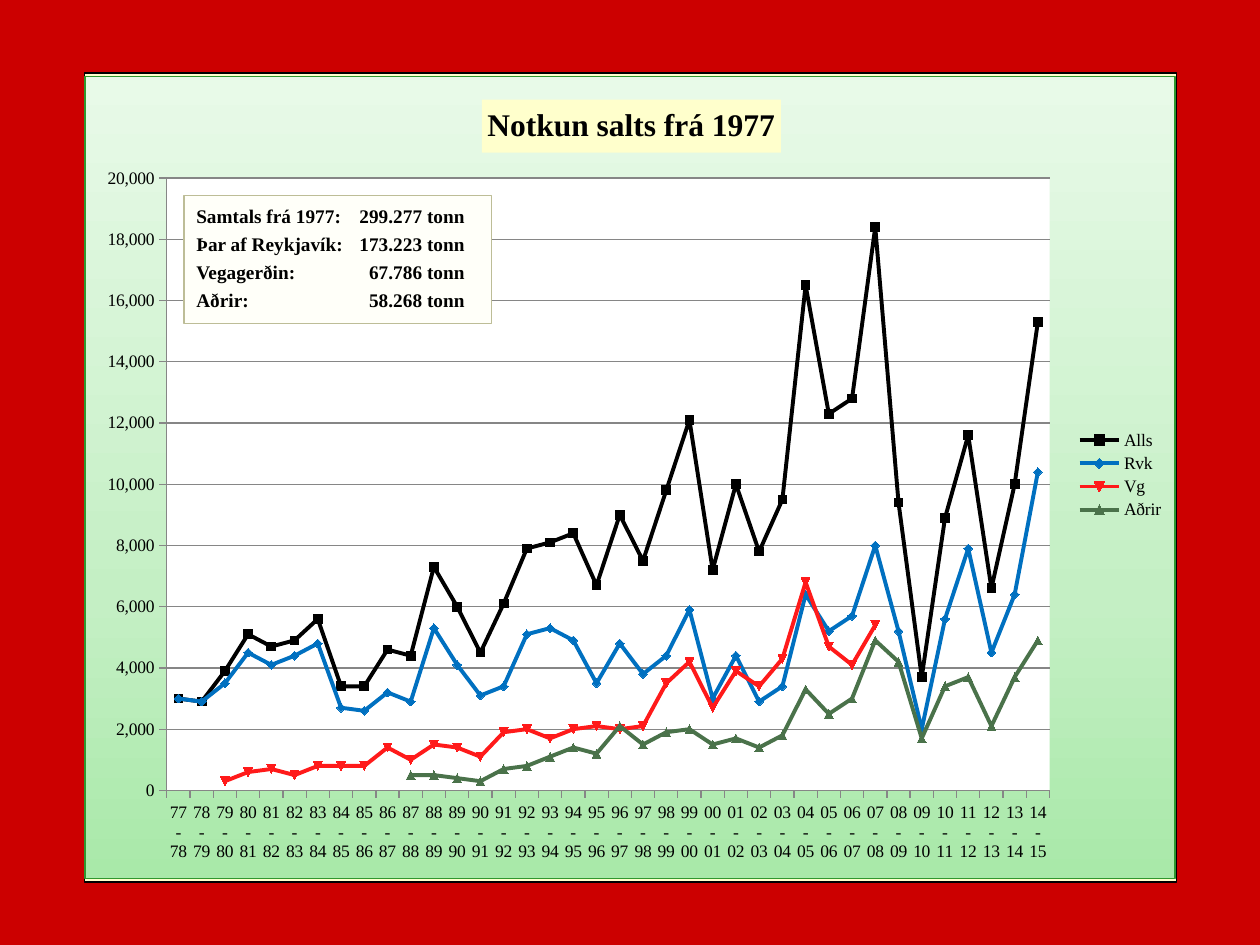
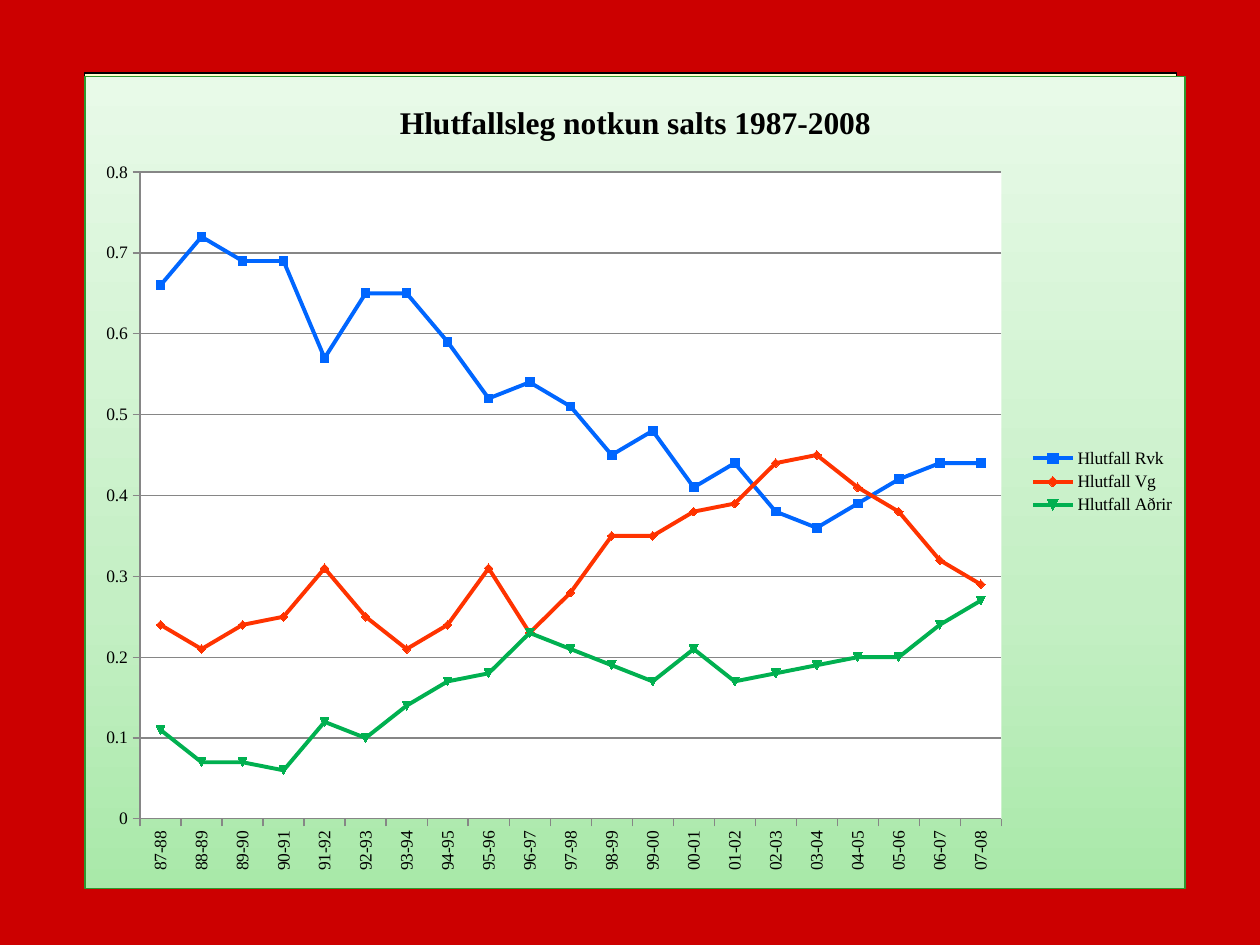
from lxml import etree
from pptx import Presentation
from pptx.chart.data import CategoryChartData
from pptx.dml.color import RGBColor
from pptx.enum.chart import XL_CHART_TYPE, XL_LEGEND_POSITION, XL_TICK_MARK
from pptx.enum.shapes import MSO_SHAPE
from pptx.enum.text import MSO_ANCHOR, PP_ALIGN
from pptx.oxml import parse_xml
from pptx.oxml.ns import nsdecls, qn
from pptx.util import Inches, Pt

LINE_CHART = XL_CHART_TYPE.LINE
LEGEND_RIGHT = XL_LEGEND_POSITION.RIGHT
TICK_OUTSIDE = XL_TICK_MARK.OUTSIDE
RECTANGLE = MSO_SHAPE.RECTANGLE
TOP = MSO_ANCHOR.TOP
LEFT = PP_ALIGN.LEFT

FONT = "Times New Roman"
COLORS = {
    "background": "CC0000",
    "cream": "FFFFCC",
    "ink": "000000",
    "note": "FFFFF9",
    "note_edge": "BDBD97",
    "chart_edge": "2F982F",
    "chart_bottom": "A9E9A9",
    "chart_middle": "C4EFC4",
    "chart_top": "E8FAE8",
    "plot": "FFFFFF",
    "grid": "868686",
    "total": "000000",
    "city": "0070C0",
    "roads": "FF1A1A",
    "others": "4A724A",
    "city_share": "0066FF",
    "roads_share": "FF3300",
    "others_share": "00B050",
}

SALT_USE = {
    "Alls": ("total", [
        3000, 2900, 3900, 5100, 4700, 4900, 5600, 3400, 3400, 4600, 4400, 7300, 6000,
        4500, 6100, 7900, 8100, 8400, 6700, 9000, 7500, 9800, 12100, 7200, 10000, 7800,
        9500, 16500, 12300, 12800, 18400, 9400, 3700, 8900, 11600, 6600, 10000, 15300]),
    "Rvk": ("city", [
        3000, 2900, 3500, 4500, 4100, 4400, 4800, 2700, 2600, 3200, 2900, 5300, 4100,
        3100, 3400, 5100, 5300, 4900, 3500, 4800, 3800, 4400, 5900, 3000, 4400, 2900,
        3400, 6400, 5200, 5700, 8000, 5200, 2000, 5600, 7900, 4500, 6400, 10400]),
    "Vg": ("roads", [None] * 2 + [
        300, 600, 700, 500, 800, 800, 800, 1400, 1000, 1500, 1400, 1100, 1900, 2000,
        1700, 2000, 2100, 2000, 2100, 3500, 4200, 2700, 3900, 3400, 4300, 6800, 4700,
        4100, 5400] + [None] * 7),
    "Aðrir": ("others", [None] * 10 + [
        500, 500, 400, 300, 700, 800, 1100, 1400, 1200, 2100, 1500, 1900, 2000, 1500,
        1700, 1400, 1800, 3300, 2500, 3000, 4900, 4200, 1700, 3400, 3700, 2100, 3700,
        4900]),
}
SALT_SHARE = {
    "Hlutfall Rvk": ("city_share", [
        0.66, 0.72, 0.69, 0.69, 0.57, 0.65, 0.65, 0.59, 0.52, 0.54, 0.51, 0.45, 0.48,
        0.41, 0.44, 0.38, 0.36, 0.39, 0.42, 0.44, 0.44]),
    "Hlutfall Vg": ("roads_share", [
        0.24, 0.21, 0.24, 0.25, 0.31, 0.25, 0.21, 0.24, 0.31, 0.23, 0.28, 0.35, 0.35,
        0.38, 0.39, 0.44, 0.45, 0.41, 0.38, 0.32, 0.29]),
    "Hlutfall Aðrir": ("others_share", [
        0.11, 0.07, 0.07, 0.06, 0.12, 0.1, 0.14, 0.17, 0.18, 0.23, 0.21, 0.19, 0.17,
        0.21, 0.17, 0.18, 0.19, 0.2, 0.2, 0.24, 0.27]),
}
TOTALS = [
    ("Samtals frá 1977:", "299.277 tonn"),
    ("Þar af Reykjavík:", "173.223 tonn"),
    ("Vegagerðin:", "67.786 tonn"),
    ("Aðrir:", "58.268 tonn"),
]


def color(name):
    return RGBColor.from_string(COLORS[name])


def winters(first, last):
    return [f"{year % 100:02}-{(year + 1) % 100:02}" for year in range(first, last)]


def style_font(font, size=10, bold=False):
    font.name = FONT
    font.size = Pt(size)
    font.bold = bold
    font.color.rgb = color("ink")


def write_text(para, text, **font_format):
    span = para.add_run()
    span.text = text
    style_font(span.font, **font_format)


def style_line(line, name, width=0.75):
    line.color.rgb = color(name)
    line.width = Pt(width)


def add_box(page, left, top, width, height, fill, edge):
    box = page.shapes.add_shape(
        RECTANGLE, Inches(left), Inches(top), Inches(width), Inches(height))
    box.shadow.inherit = False
    box.fill.solid()
    box.fill.fore_color.rgb = color(fill)
    style_line(box.line, edge)
    return box


def add_page(deck):
    page = deck.slides.add_slide(deck.slide_layouts[6])
    page.background.fill.solid()
    page.background.fill.fore_color.rgb = color("background")
    add_box(page, 0.67, 0.58, 8.67, 6.42, "cream", "ink")
    return page


def place(element, index, **fractions):
    for old in element.findall(qn("c:layout")):
        element.remove(old)
    layout = etree.Element(qn("c:layout"))
    manual = etree.SubElement(layout, qn("c:manualLayout"))
    settings = {"xMode": "edge", "yMode": "edge", **fractions}
    if index == 0:
        settings = {"layoutTarget": "inner", **settings}
    for tag, value in settings.items():
        etree.SubElement(manual, qn(f"c:{tag}")).set("val", str(value))
    element.insert(index, layout)


def fill_chart(chart):
    stops = [(0, "chart_bottom"), (35000, "chart_middle"), (100000, "chart_top")]
    gradient = "".join(
        f'<a:gs pos="{position}"><a:srgbClr val="{COLORS[name]}"/></a:gs>'
        for position, name in stops)
    frame = parse_xml(
        f'<c:spPr {nsdecls("c", "a")}><a:gradFill><a:gsLst>{gradient}</a:gsLst>'
        f'<a:lin ang="16200000" scaled="0"/></a:gradFill><a:ln w="9525"><a:solidFill>'
        f'<a:srgbClr val="{COLORS["chart_edge"]}"/></a:solidFill></a:ln></c:spPr>')
    chart._chartSpace.find(qn("c:txPr")).addprevious(frame)
    plot_fill = parse_xml(
        f'<c:spPr {nsdecls("c", "a")}><a:solidFill>'
        f'<a:srgbClr val="{COLORS["plot"]}"/></a:solidFill></c:spPr>')
    chart._chartSpace.chart.plotArea.append(plot_fill)


def style_axes(chart, maximum, step, number_format, rotation):
    values, categories = chart.value_axis, chart.category_axis
    values.minimum_scale = 0
    values.maximum_scale = maximum
    values.major_unit = step
    values.has_major_gridlines = True
    style_line(values.major_gridlines.format.line, "grid")
    values.tick_labels.number_format = number_format
    values.tick_labels.number_format_is_linked = False
    for axis in (values, categories):
        axis.major_tick_mark = TICK_OUTSIDE
        style_line(axis.format.line, "grid")
        style_font(axis.tick_labels.font)
    labels = categories._element.find(qn("c:txPr")).find(qn("a:bodyPr"))
    labels.set("rot", str(rotation * 60000))
    labels.set("vert", "horz")


def add_line_chart(page, title, categories, series, width, height, axes, layouts):
    data = CategoryChartData()
    data.categories = categories
    for name, (_, values) in series.items():
        data.add_series(name, values)
    chart = page.shapes.add_chart(
        LINE_CHART, Inches(0.67), Inches(0.6), Inches(width), Inches(height), data).chart
    style_font(chart.font)
    chart.has_title = True
    write_text(chart.chart_title.text_frame.paragraphs[0], title, size=18, bold=True)
    chart.has_legend = True
    chart.legend.position = LEGEND_RIGHT
    chart.legend.include_in_layout = False
    style_font(chart.legend.font)
    chart.plots[0].vary_by_categories = False
    for line, (color_name, _) in zip(chart.plots[0].series, series.values()):
        line.smooth = False
        line.marker.style = None
        style_line(line.format.line, color_name, width=2.25)
    style_axes(chart, **axes)
    fill_chart(chart)
    place(chart._chartSpace.chart.plotArea, 0, **layouts["plot"])
    place(chart.chart_title._element, 1, **layouts["title"])
    place(chart.legend._element, 1, **layouts["legend"])
    return chart


def add_totals(page):
    box = add_box(page, 1.46, 1.55, 2.44, 1.02, "note", "note_edge")
    frame = box.text_frame
    frame.word_wrap = True
    frame.vertical_anchor = TOP
    frame.margin_top = Inches(0.07)
    for index, (label, amount) in enumerate(TOTALS):
        para = frame.add_paragraph() if index else frame.paragraphs[0]
        para.alignment = LEFT
        if index:
            para.space_before = Pt(2.75)
        tabs = etree.SubElement(para._p.get_or_add_pPr(), qn("a:tabLst"))
        etree.SubElement(tabs, qn("a:tab"), pos=str(Inches(2.13)), algn="r")
        write_text(para, f"{label}\t{amount}", size=11, bold=True)


def main():
    deck = Presentation()
    deck.slide_width, deck.slide_height = Inches(10), Inches(7.5)

    page = add_page(deck)
    chart = add_line_chart(
        page, "Notkun salts frá 1977", winters(1977, 2015), SALT_USE, 8.66, 6.38,
        axes={"maximum": 20000, "step": 2000, "number_format": "#,##0", "rotation": 0},
        layouts={
            "plot": {"x": 0.075, "y": 0.127, "w": 0.81, "h": 0.763},
            "title": {"x": 0.364, "y": 0.029},
            "legend": {"x": 0.905, "y": 0.437, "w": 0.09, "h": 0.12},
        })
    title_fill = chart.chart_title.format.fill
    title_fill.solid()
    title_fill.fore_color.rgb = color("cream")
    add_totals(page)

    page = add_page(deck)
    add_line_chart(
        page, "Hlutfallsleg notkun salts 1987-2008", winters(1987, 2008), SALT_SHARE,
        8.74, 6.46,
        axes={"maximum": 0.8, "step": 0.1, "number_format": "General", "rotation": -90},
        layouts={
            "plot": {"x": 0.05, "y": 0.118, "w": 0.783, "h": 0.796},
            "title": {"x": 0.281, "y": 0.026},
            "legend": {"x": 0.855, "y": 0.454, "w": 0.14, "h": 0.09},
        })

    deck.save("out.pptx")


if __name__ == "__main__":
    main()
